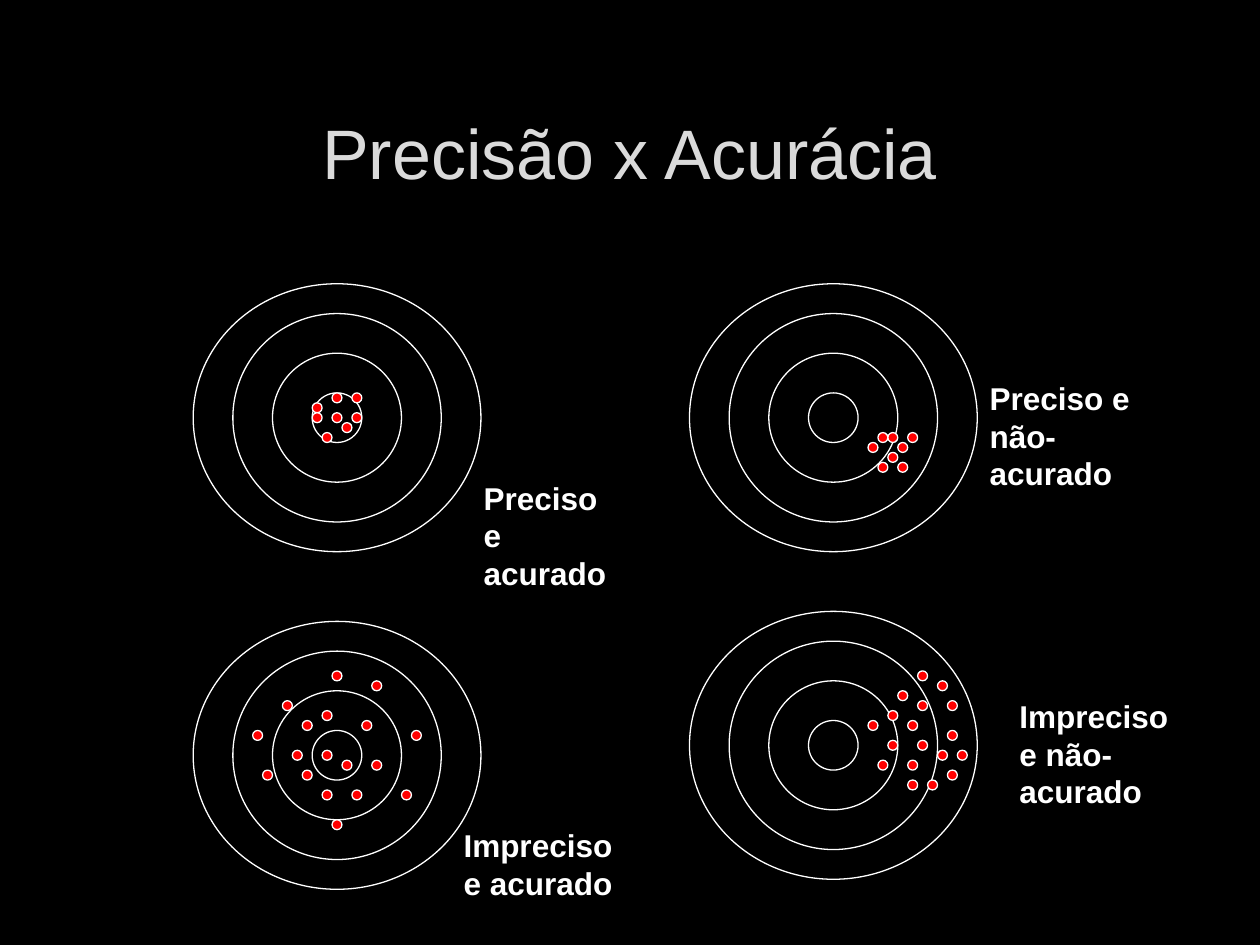
"""Build the slide that compares precision and accuracy with four targets."""
from dataclasses import dataclass

from pptx import Presentation
from pptx.dml.color import RGBColor
from pptx.enum.shapes import MSO_SHAPE
from pptx.enum.text import MSO_ANCHOR, PP_ALIGN
from pptx.util import Pt


@dataclass(frozen=True)
class Theme:
    background: str = "000000"
    title: str = "DADADA"
    ink: str = "FFFFFF"
    hit: str = "FF0000"
    font: str = "Arial"
    title_size: float = 40
    label_size: float = 18
    line_width: float = 0.75


STEP = 5.67
RINGS = [(5, 5), (21, 21), (13, 13), (29, 27)]
TARGETS = [
    ("Preciso e acurado", (192.6, 238.7), (269.3, 270, 85, 72),
     [(0, 0), (2, 0), (-1, 2), (-2, -1), (0, -2), (2, -2), (1, 1), (-2, 0)]),
    ("Preciso e não-acurado", (476.2, 238.7), (558.4, 213, 102.2, 72),
     [(4, 3), (5, 2), (6, 4), (7, 3), (5, 5), (7, 5), (6, 2), (8, 2)]),
    ("Impreciso e acurado", (192.6, 431.6), (257.8, 468.6, 102.2, 50.4),
     [(-3, -3), (2, 4), (1, 1), (3, -3), (-1, 0), (-3, 2), (-1, -4), (-4, 0), (4, 1),
      (-1, 4), (0, -8), (4, -7), (-5, -5), (-7, 2), (7, 4), (0, 7), (8, -2), (-8, -2)]),
    ("Impreciso e não-acurado", (476.2, 425.9), (575.4, 394.6, 102.2, 72),
     [(9, 0), (6, -3), (9, -4), (12, -1), (6, 0), (8, 2), (12, 3), (12, -4), (8, 4),
      (10, 4), (7, -5), (11, -6), (4, -2), (8, -2), (11, 1), (5, 2), (9, -7), (13, 1)]),
]


class SlideBuilder:
    def __init__(self, slide, theme):
        self.slide = slide
        self.theme = theme
        fill = slide.background.fill
        fill.solid()
        fill.fore_color.rgb = RGBColor.from_string(theme.background)

    def text(self, words, box, size, color, bold=False,
             align=PP_ALIGN.LEFT, anchor=MSO_ANCHOR.TOP):
        frame = self.slide.shapes.add_textbox(*map(Pt, box)).text_frame
        frame.word_wrap = True
        frame.vertical_anchor = anchor
        frame.text = words
        paragraph = frame.paragraphs[0]
        paragraph.alignment = align
        font = paragraph.runs[0].font
        font.name, font.size, font.bold = self.theme.font, Pt(size), bold
        font.color.rgb = RGBColor.from_string(color)

    def title(self, words, box):
        self.text(words, box, self.theme.title_size, self.theme.title,
                  align=PP_ALIGN.CENTER, anchor=MSO_ANCHOR.MIDDLE)

    def label(self, words, box):
        self.text(words, box, self.theme.label_size, self.theme.ink, bold=True)

    def ellipse(self, center, width, height, color=None):
        x, y = center
        oval = self.slide.shapes.add_shape(
            MSO_SHAPE.OVAL, Pt(x - width / 2), Pt(y - height / 2), Pt(width), Pt(height))
        oval.shadow.inherit = False
        if color:
            oval.fill.solid()
            oval.fill.fore_color.rgb = RGBColor.from_string(color)
        else:
            oval.fill.background()
        oval.line.color.rgb = RGBColor.from_string(self.theme.ink)
        oval.line.width = Pt(self.theme.line_width)

    def target(self, center, hits):
        for columns, rows in RINGS:
            self.ellipse(center, columns * STEP, rows * STEP)
        x, y = center
        for column, row in hits:
            self.ellipse((x + column * STEP, y + row * STEP), STEP, STEP, self.theme.hit)


def main():
    presentation = Presentation()
    presentation.slide_width, presentation.slide_height = Pt(720), Pt(540)
    slide = presentation.slides.add_slide(presentation.slide_layouts[6])
    builder = SlideBuilder(slide, Theme())
    builder.title("Precisão x Acurácia", (54, 48.2, 611.3, 76.3))
    for words, center, label_box, hits in TARGETS:
        builder.target(center, hits)
        builder.label(words, label_box)
    presentation.save("out.pptx")


if __name__ == "__main__":
    main()
